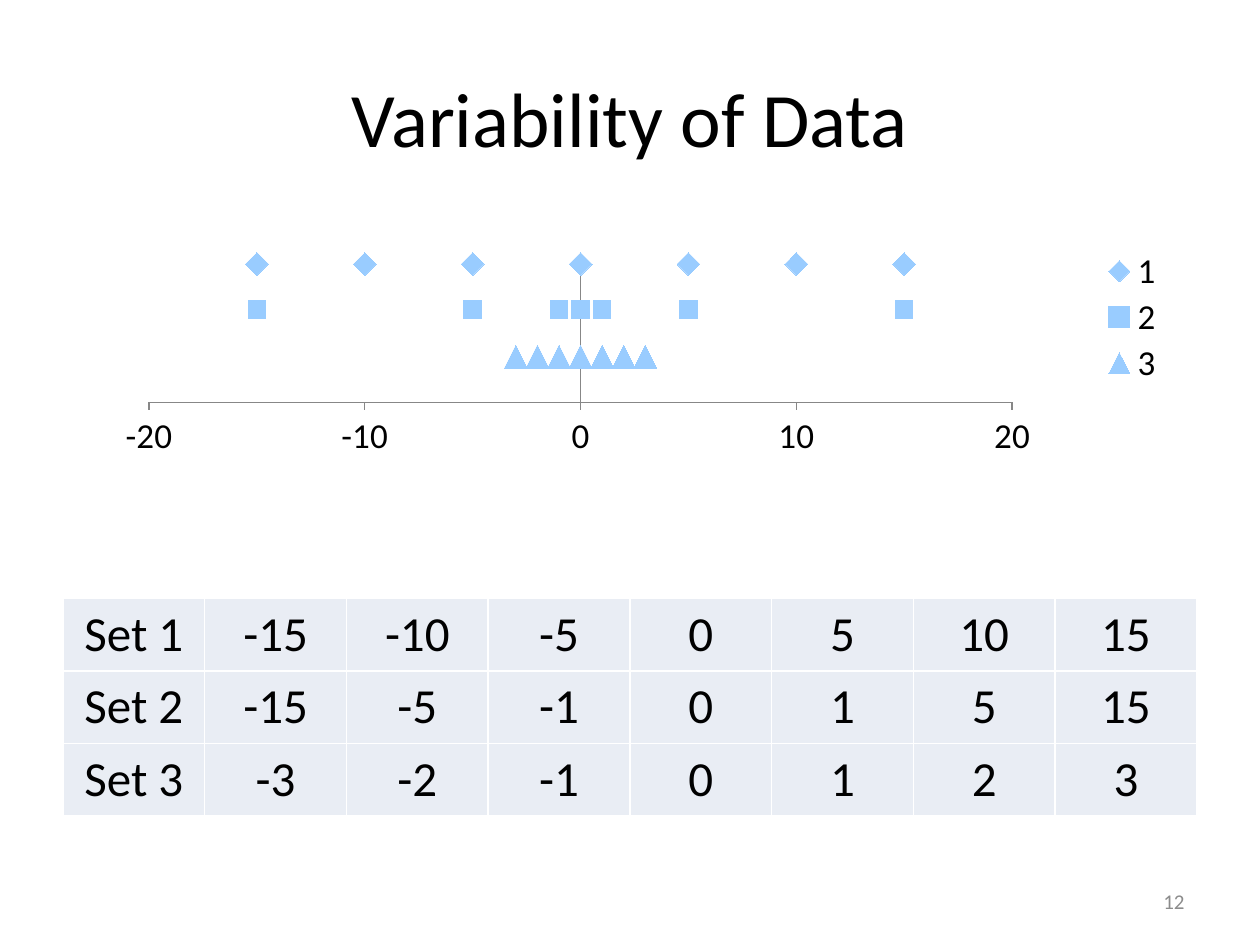
from lxml import etree
from pptx import Presentation
from pptx.chart.data import XyChartData
from pptx.dml.color import RGBColor
from pptx.enum.chart import XL_CHART_TYPE, XL_LEGEND_POSITION, XL_MARKER_STYLE, XL_TICK_LABEL_POSITION, XL_TICK_MARK
from pptx.enum.text import MSO_ANCHOR, PP_ALIGN
from pptx.oxml.ns import qn
from pptx.util import Inches, Pt

SCATTER = XL_CHART_TYPE.XY_SCATTER
RIGHT_LEGEND = XL_LEGEND_POSITION.RIGHT
DIAMOND, SQUARE, TRIANGLE = XL_MARKER_STYLE.DIAMOND, XL_MARKER_STYLE.SQUARE, XL_MARKER_STYLE.TRIANGLE
NO_LABELS = XL_TICK_LABEL_POSITION.NONE
TICK_OUT, TICK_NONE = XL_TICK_MARK.OUTSIDE, XL_TICK_MARK.NONE
MIDDLE = MSO_ANCHOR.MIDDLE
CENTER, RIGHT = PP_ALIGN.CENTER, PP_ALIGN.RIGHT

FONT = "Calibri"
BLACK = RGBColor(0x00, 0x00, 0x00)
WHITE = RGBColor(0xFF, 0xFF, 0xFF)
GRAY = RGBColor(0x8C, 0x8C, 0x8C)
AXIS_GRAY = RGBColor(0x87, 0x87, 0x87)
CELL_BLUE = RGBColor(0xE9, 0xED, 0xF4)
MARKER_BLUE = RGBColor(0x99, 0xCC, 0xFF)

COLS, ROWS = 20, 15
SLIDE_W, SLIDE_H = Inches(10), Inches(7.5)

SETS = [
    [-15, -10, -5, 0, 5, 10, 15],
    [-15, -5, -1, 0, 1, 5, 15],
    [-3, -2, -1, 0, 1, 2, 3],
]
LEVELS = [100, 67, 33]
MARKERS = [(DIAMOND, 13), (SQUARE, 10), (TRIANGLE, 13)]


def grid(col, row, cols, rows):
    w, h = SLIDE_W / COLS, SLIDE_H / ROWS
    return int(col * w), int(row * h), int(cols * w), int(rows * h)


def set_font(font, size, color=BLACK):
    font.name = FONT
    font.size = Pt(size)
    font.color.rgb = color


def write(tf, text, size, align, color=BLACK):
    tf.text = text
    p = tf.paragraphs[0]
    p.alignment = align
    set_font(p.font, size, color)


def add_title(s, box, text):
    sp = s.shapes.title
    sp.left, sp.top, sp.width, sp.height = box
    sp.text_frame.vertical_anchor = MIDDLE
    write(sp.text_frame, text, 44, CENTER)


def add_number(s, box, text):
    tf = s.shapes.add_textbox(*box).text_frame
    tf.word_wrap = True
    tf.vertical_anchor = MIDDLE
    write(tf, text, 12, RIGHT, GRAY)


def set_layout(parent, index, **shares):
    for old in parent.findall(qn("c:layout")):
        parent.remove(old)
    layout = etree.Element(qn("c:layout"))
    parent.insert(index, layout)
    manual = etree.SubElement(layout, qn("c:manualLayout"))
    for tag, val in shares.items():
        etree.SubElement(manual, qn("c:" + tag), val=str(val))


def format_axis(axis, low, high, step, tick):
    axis.minimum_scale, axis.maximum_scale, axis.major_unit = low, high, step
    axis.has_major_gridlines = False
    axis.major_tick_mark, axis.minor_tick_mark = tick, TICK_NONE
    axis.format.line.color.rgb = AXIS_GRAY


def add_dot_chart(s, box):
    data = XyChartData()
    for i, (values, level) in enumerate(zip(SETS, LEVELS), 1):
        series = data.add_series(str(i))
        for x in values:
            series.add_data_point(x, level)
    chart = s.shapes.add_chart(SCATTER, *box, data).chart
    chart.has_title = False
    set_font(chart.font, 10)
    chart.plots[0].vary_by_categories = False

    for series, (style, size) in zip(chart.plots[0].series, MARKERS):
        series.smooth = False
        series.format.line.fill.background()
        marker = series.marker
        marker.style, marker.size = style, size
        marker.format.fill.solid()
        marker.format.fill.fore_color.rgb = MARKER_BLUE
        marker.format.line.fill.background()

    format_axis(chart.category_axis, -20, 20, 10, TICK_OUT)
    set_font(chart.category_axis.tick_labels.font, 20)
    format_axis(chart.value_axis, 0, 100, 33, TICK_NONE)
    chart.value_axis.tick_label_position = NO_LABELS

    chart.has_legend = True
    legend = chart.legend
    legend.position = RIGHT_LEGEND
    legend.include_in_layout = False
    set_font(legend.font, 20)
    set_layout(legend._element, 1, xMode="edge", yMode="edge", x=0.92, y=0.02, w=0.06, h=0.57)
    plot_area = chart._chartSpace.find(".//" + qn("c:plotArea"))
    set_layout(plot_area, 0, layoutTarget="inner", xMode="edge", yMode="edge",
               x=0.05, y=0.09, w=0.79, h=0.56)


def add_borders(cell):
    tcPr = cell._tc.get_or_add_tcPr()
    for i, side in enumerate(("lnL", "lnR", "lnT", "lnB")):
        ln = etree.Element(qn("a:" + side), w=str(Pt(1)))
        fill = etree.SubElement(ln, qn("a:solidFill"))
        etree.SubElement(fill, qn("a:srgbClr"), val=str(WHITE))
        tcPr.insert(i, ln)


def add_data_table(s, box):
    rows = [[f"Set {i}", *map(str, values)] for i, values in enumerate(SETS, 1)]
    table = s.shapes.add_table(len(rows), len(rows[0]), *box).table
    table.first_row = table.horz_banding = False
    for r, row in enumerate(rows):
        for c, text in enumerate(row):
            cell = table.cell(r, c)
            write(cell.text_frame, text, 28, CENTER)
            cell.fill.solid()
            cell.fill.fore_color.rgb = CELL_BLUE
            add_borders(cell)


def main():
    prs = Presentation()
    prs.slide_width, prs.slide_height = SLIDE_W, SLIDE_H
    s = prs.slides.add_slide(prs.slide_layouts[5])
    add_title(s, grid(1, 0.6, 18, 2.5), "Variability of Data")
    add_data_table(s, grid(1, 9.5, 18, 3.44))
    add_dot_chart(s, grid(1.5, 3.84, 17.34, 3.92))
    add_number(s, grid(14.34, 13.9, 4.66, 0.8), "12")
    prs.save("out.pptx")


if __name__ == "__main__":
    main()
